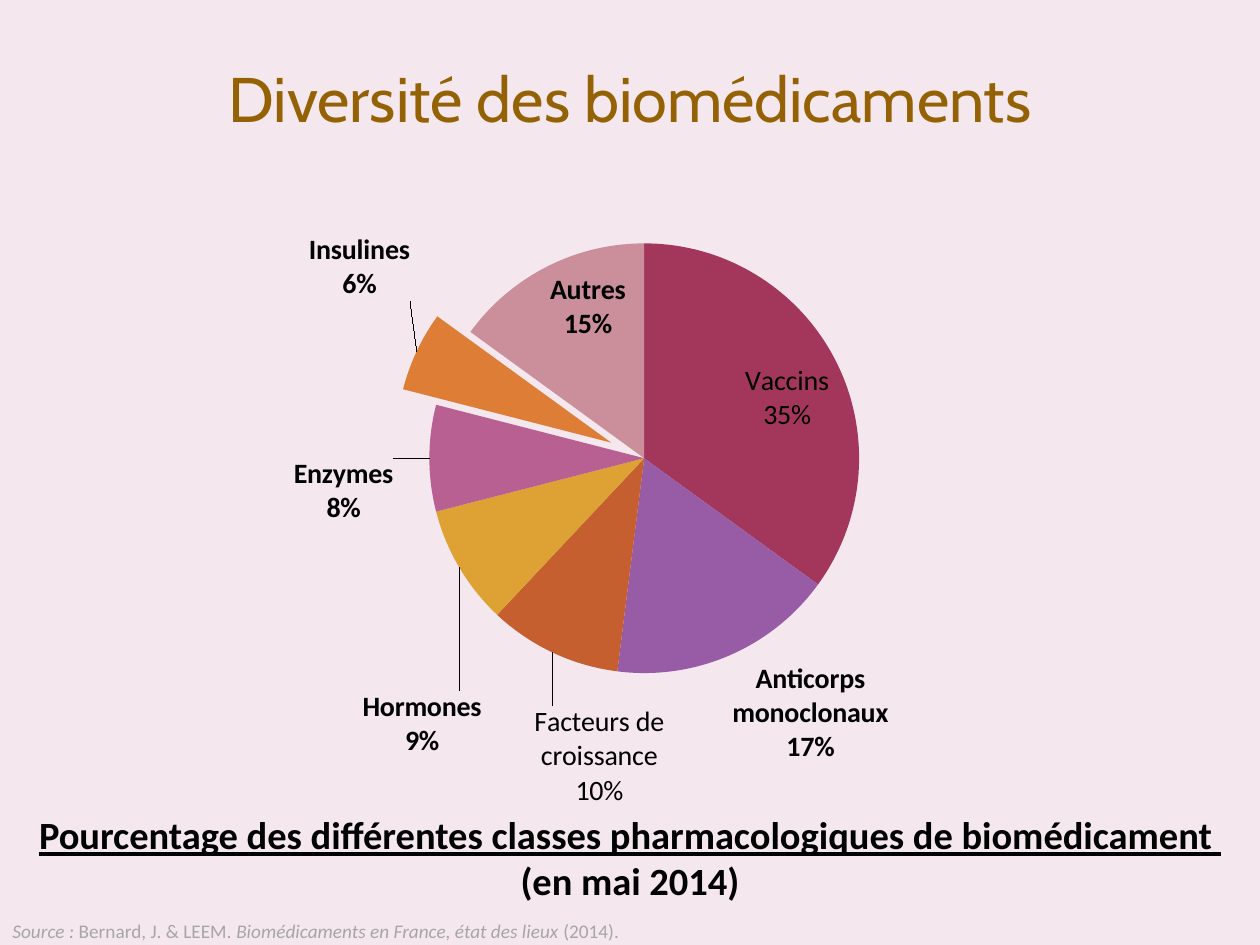
from dataclasses import dataclass
from typing import Any, Optional

from lxml import etree
from pptx import Presentation
from pptx import util as u
from pptx.chart.data import CategoryChartData
from pptx.dml.color import RGBColor
from pptx.enum import chart as ch
from pptx.enum import text as tx
from pptx.oxml.ns import qn

INSIDE = ch.XL_LABEL_POSITION.INSIDE_END
OUTSIDE = ch.XL_LABEL_POSITION.OUTSIDE_END


@dataclass
class DrugClass:
    name: str
    share: int
    color: str
    position: Any = OUTSIDE
    shift: Optional[tuple[float, float]] = None
    caption: str = ""
    explosion: int = 0


@dataclass
class Run:
    text: str
    format: dict[str, Any]


CLASSES = [
    DrugClass("Vaccin", 35, "A2375B", INSIDE, caption="Vaccins"),
    DrugClass("Anticorps monoclonaux", 17, "985BA5"),
    DrugClass("Facteur de croissance", 10, "C55F30", shift=(0.12, 0.07),
              caption="Facteurs de croissance"),
    DrugClass("Hormones", 9, "DDA233", shift=(0.03, 0.18)),
    DrugClass("Enzymes", 8, "B86091", shift=(-0.03, 0.05)),
    DrugClass("Insulines", 6, "DD7D36", shift=(0, -0.07), explosion=17),
    DrugClass("Autres", 15, "CB8E9B", INSIDE),
]


def rgb(color: str) -> RGBColor:
    return RGBColor.from_string(color)


def apply_format(font: Any, values: dict[str, Any]) -> None:
    for key, value in values.items():
        if key == "color":
            font.color.rgb = rgb(value)
        else:
            setattr(font, key, value)


def font_format(name: str, size: int, color: str, **extra: Any) -> dict[str, Any]:
    return {"name": name, "size": u.Pt(size), "color": color, **extra}


def place(shape: Any, left: float, top: float, width: float, height: float) -> None:
    for side, value in zip(("left", "top", "width", "height"), (left, top, width, height)):
        setattr(shape, side, u.Inches(value))


def write(frame: Any, paragraphs: list[list[Run]], align: Any) -> None:
    frame.word_wrap = True
    for index, runs in enumerate(paragraphs):
        paragraph = frame.paragraphs[0] if index == 0 else frame.add_paragraph()
        paragraph.alignment = align
        for part in runs:
            run = paragraph.add_run()
            run.text = part.text
            apply_format(run.font, part.format)


def manual_layout(x: float, y: float, size: Optional[tuple[float, float]] = None) -> Any:
    layout = etree.Element(qn("c:layout"))
    manual = etree.SubElement(layout, qn("c:manualLayout"))
    values: dict[str, Any] = {"x": x, "y": y}
    if size:
        values = {"layoutTarget": "inner", "xMode": "edge", "yMode": "edge",
                  **values, "w": size[0], "h": size[1]}
    for tag, value in values.items():
        etree.SubElement(manual, qn(f"c:{tag}")).set("val", str(value))
    return layout


def show_name_and_percent(labels: Any) -> None:
    for tag, value in (("showVal", "0"), ("showCatName", "1"), ("showPercent", "1")):
        labels.find(qn(f"c:{tag}")).set("val", value)
    separator = etree.Element(qn("c:separator"))
    separator.text = "\n"
    last = labels.find(qn("c:showBubbleSize"))
    if last is None:
        last = labels.find(qn("c:showPercent"))
    last.addnext(separator)


def draw_class(point: Any, item: DrugClass, index: int, all_labels: Any) -> None:
    point.format.fill.solid()
    point.format.fill.fore_color.rgb = rgb(item.color)
    point.format.line.fill.background()
    if item.explosion:
        slice_xml = point.format.fill._xPr.getparent()
        explosion = etree.Element(qn("c:explosion"))
        explosion.set("val", str(item.explosion))
        slice_xml.find(qn("c:spPr")).addprevious(explosion)
    label = point.data_label
    if item.caption:
        regular = font_format("Calibri", 16, "000000", bold=False)
        write(label.text_frame,
              [[Run(item.caption, regular)], [Run(f"{item.share}%", regular)]],
              tx.PP_ALIGN.CENTER)
    else:
        apply_format(label.font, font_format("Calibri", 16, "000000", bold=True))
    label.position = item.position
    label_xml = next(node for node in all_labels.findall(qn("c:dLbl"))
                     if node.find(qn("c:idx")).get("val") == str(index))
    show_name_and_percent(label_xml)
    if item.shift:
        label_xml.find(qn("c:idx")).addnext(manual_layout(*item.shift))


def draw_pie(slide: Any) -> None:
    data = CategoryChartData()
    data.categories = [item.name for item in CLASSES]
    data.add_series("Series 1", [item.share for item in CLASSES])
    area = [u.Inches(value) for value in (1.21, 1.17, 7.58, 5.25)]
    pie = slide.shapes.add_chart(ch.XL_CHART_TYPE.PIE, *area, data).chart
    pie.has_legend = False
    pie.has_title = False
    apply_format(pie.font, font_format("Calibri", 18, "000000"))
    plot = pie.plots[0]
    plot.vary_by_categories = True
    plot_area = pie._chartSpace.chart.plotArea
    for old in plot_area.findall(qn("c:layout")):
        plot_area.remove(old)
    plot_area.insert(0, manual_layout(0.29, 0.14, (0.45, 0.66)))
    series = plot.series[0]
    labels = series.data_labels
    apply_format(labels.font, font_format("Calibri", 16, "000000", bold=True))
    labels.number_format = "0%"
    labels.number_format_is_linked = False
    labels.position = OUTSIDE
    labels_xml = labels._element
    show_name_and_percent(labels_xml)
    leader = labels_xml.find(qn("c:showLeaderLines"))
    if leader is None:
        leader = etree.SubElement(labels_xml, qn("c:showLeaderLines"))
    leader.set("val", "1")
    for index, item in enumerate(CLASSES):
        draw_class(series.points[index], item, index, labels_xml)


def main() -> None:
    deck = Presentation()
    deck.slide_width, deck.slide_height = u.Inches(10), u.Inches(7.5)
    slide = deck.slides.add_slide(deck.slide_layouts[5])
    slide.background.fill.solid()
    slide.background.fill.fore_color.rgb = rgb("F4E7ED")

    title = slide.shapes.title
    place(title, 0, 0.42, 10, 0.71)
    write(title.text_frame, [[Run("Diversité des biomédicaments",
                                  font_format("Cabin", 36, "946204"))]],
          tx.PP_ALIGN.CENTER)

    draw_pie(slide)

    heading = font_format("Calibri", 22, "000000", bold=True)
    caption = slide.shapes.add_textbox(0, 0, 0, 0)
    place(caption, 0, 6.39, 10, 0.84)
    write(caption.text_frame, [
        [Run("Pourcentage des différentes classes pharmacologiques de biomédicament ",
             {**heading, "underline": True})],
        [Run("(en mai 2014)", heading)],
    ], tx.PP_ALIGN.CENTER)

    plain = font_format("Calibri", 11, "A6A6A6")
    italic = {**plain, "italic": True}
    source = slide.shapes.add_textbox(0, 0, 0, 0)
    place(source, 0, 7.25, 5.42, 0.33)
    write(source.text_frame, [[
        Run("Source : ", italic),
        Run("Bernard, J. & LEEM. ", plain),
        Run("Biomédicaments en France, état des lieux ", italic),
        Run("(2014).", plain),
    ]], tx.PP_ALIGN.LEFT)

    deck.save("out.pptx")


if __name__ == "__main__":
    main()
